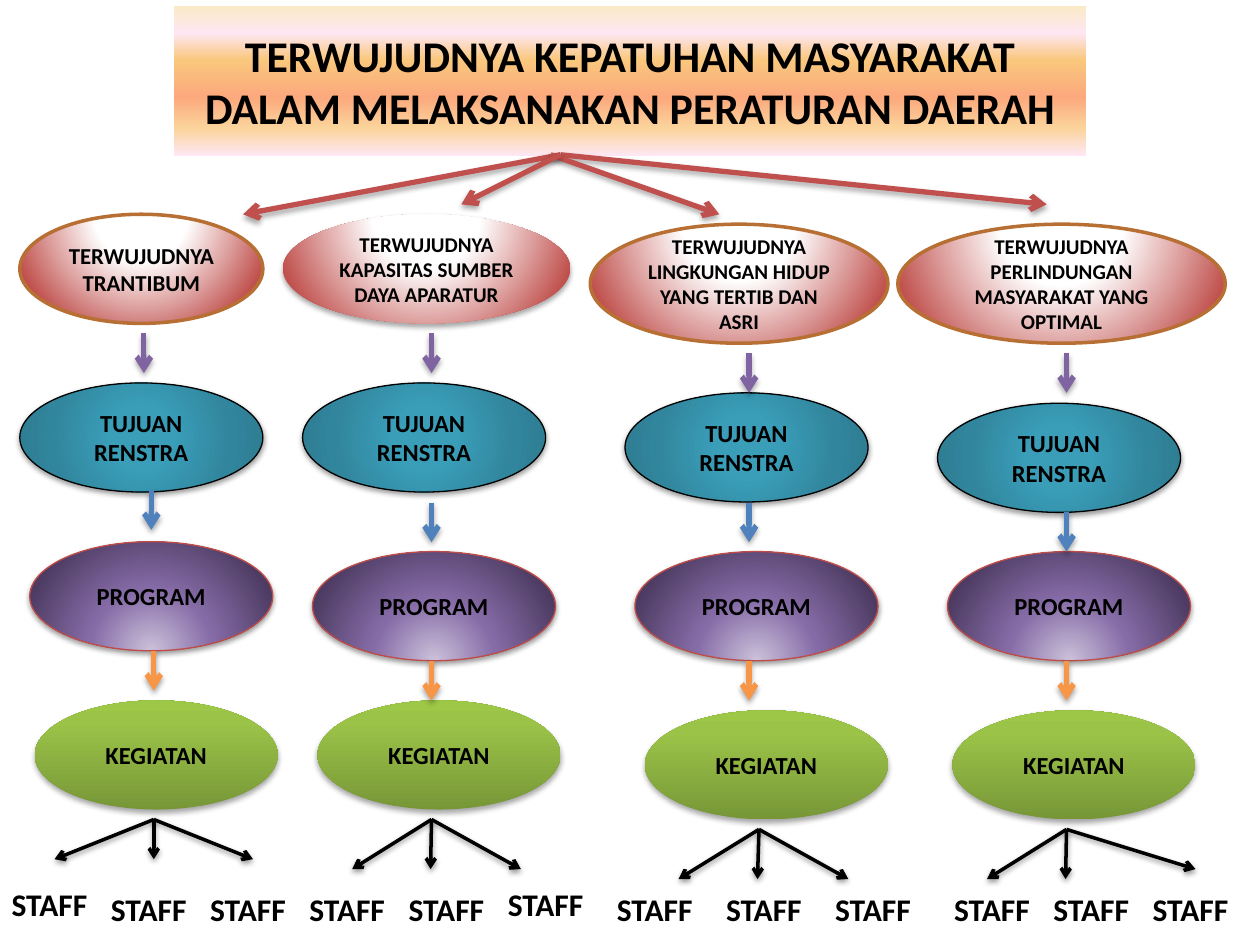
import lxml.etree
import pptx
import pptx.dml.color
import pptx.enum.shapes
import pptx.enum.text
import pptx.oxml.ns
import pptx.util

Cm = pptx.util.Cm
SOFT = (35, 1.8)
DARK = (38, 1.6)
WARM = [(0, "FBEAC7"), (18, "FEE7F2"), (36, "FAC77D"),
        (61, "FBA97D"), (82, "FBD49C"), (100, "FEE7F2")]
ROSE = [(0, "FFFFFF"), (35, "FFFFFF"), (100, "C0504D")]
TEAL = [(0, "3A9EB9"), (23, "3A9EB9"), (69, "31859C"), (97, "2E7C91")]
PLUM = [(0, "CCC1DA"), (46, "866CA7"), (100, "4D3B62")]
LEAF = [(0, "779737"), (80, "9BC348"), (100, "9DC746")]


def color(code):
    return pptx.dml.color.RGBColor.from_string(code)


def node(root, tag, **attrs):
    item = lxml.etree.SubElement(root, pptx.oxml.ns.qn("a:" + tag))
    for name, value in attrs.items():
        item.set(name, str(value))
    return item


class Chart:
    font = "Calibri"
    ink = "000000"

    def __init__(self, deck):
        self.slide = deck.slides.add_slide(deck.slide_layouts[5])
        self.shapes = self.slide.shapes

    def blend(self, shape, stops, angle=None, focus=None):
        grad = node(shape._element.spPr, "gradFill", rotWithShape=1)
        row = node(grad, "gsLst")
        for place, code in stops:
            node(node(row, "gs", pos=place * 1000), "srgbClr", val=code)
        if focus:
            ring = node(grad, "path", path="circle")
            sides = {side: part * 1000 for side, part in zip("ltrb", focus)}
            node(ring, "fillToRect", **sides)
        else:
            node(grad, "lin", ang=angle * 60000, scaled=0)

    def shade(self, item, look):
        glow = node(item._element.spPr, "effectLst")
        if look:
            alpha, dist = look
            drop = node(glow, "outerShdw", blurRad=pptx.util.Pt(3.15),
                        dist=pptx.util.Pt(dist), dir=5400000, rotWithShape=0)
            node(node(drop, "srgbClr", val=self.ink), "alpha", val=alpha * 1000)

    def words(self, shape, text, size):
        frame = shape.text_frame
        frame.text = text
        frame.word_wrap = True
        frame.auto_size = pptx.enum.text.MSO_AUTO_SIZE.NONE
        frame.vertical_anchor = pptx.enum.text.MSO_ANCHOR.MIDDLE
        for para in frame.paragraphs:
            para.alignment = pptx.enum.text.PP_ALIGN.CENTER
            para.font.name = self.font
            para.font.size = pptx.util.Pt(size)
            para.font.bold = True
            para.font.color.rgb = color(self.ink)

    def title(self, text, x, y, w, h):
        shape = self.shapes.title
        shape.left, shape.top, shape.width, shape.height = map(Cm, (x, y, w, h))
        self.blend(shape, WARM, angle=90)
        self.words(shape, text, 25)

    def oval(self, text, x, y, w, h, size, stops, angle=None, focus=None,
             edge=None, look=None):
        kind = pptx.enum.shapes.MSO_SHAPE.OVAL
        shape = self.shapes.add_shape(kind, Cm(x), Cm(y), Cm(w), Cm(h))
        self.blend(shape, stops, angle, focus)
        if edge:
            shape.line.color.rgb = color(edge[0])
            shape.line.width = pptx.util.Pt(edge[1])
        else:
            shape.line.fill.background()
        self.shade(shape, look)
        self.words(shape, text, size)

    def arrow(self, start, end, code, width=3, look=SOFT):
        kind = pptx.enum.shapes.MSO_CONNECTOR.STRAIGHT
        link = self.shapes.add_connector(kind, *map(Cm, (*start, *end)))
        link.line.color.rgb = color(code)
        link.line.width = pptx.util.Pt(width)
        edge = link._element.spPr.find(pptx.oxml.ns.qn("a:ln"))
        node(edge, "tailEnd", type="arrow")
        self.shade(link, look)

    def label(self, text, x, y, w, h):
        box = self.shapes.add_textbox(Cm(x), Cm(y), Cm(w), Cm(h))
        self.words(box, text, 18)


def main():
    deck = pptx.Presentation()
    deck.slide_width, deck.slide_height = Cm(25.4), Cm(19.05)
    chart = Chart(deck)
    chart.title("TERWUJUDNYA KEPATUHAN MASYARAKAT\n"
                "DALAM MELAKSANAKAN PERATURAN DAERAH", 3.5, 0.13, 18.4, 3)

    for start, end in [(11.3, (4.9, 4.32)), (11.3, (21.1, 4.12)),
                       (11.1, (14.5, 4.32)), (11.3, (9.3, 4.12))]:
        chart.arrow((start, 3.12), end, "C0504D")

    rim = ("B76F34", 2)
    goals = [
        ("TERWUJUDNYA TRANTIBUM", 0.4, 4.32, 4.9, 2.2, 13, rim, None),
        ("TERWUJUDNYA KAPASITAS SUMBER DAYA APARATUR",
         5.7, 4.32, 5.8, 2.2, 12, None, SOFT),
        ("TERWUJUDNYA LINGKUNGAN HIDUP YANG TERTIB DAN ASRI",
         11.9, 4.52, 6, 2.4, 12, rim, None),
        ("TERWUJUDNYA PERLINDUNGAN MASYARAKAT YANG OPTIMAL",
         18.1, 4.52, 6.6, 2.4, 12, rim, None),
    ]
    for *place, edge, look in goals:
        chart.oval(*place, ROSE, focus=(50, -80, 50, 180), edge=edge, look=look)

    steps = [
        ("TUJUAN RENSTRA", (0.4, 6.1, 12.6, 18.9), (7.72, 7.72, 7.92, 8.13),
         dict(stops=TEAL, focus=(50, 50, 50, 50), edge=("000000", 0.75), look=DARK)),
        ("PROGRAM", (0.6, 6.3, 12.8, 19.1), (10.92, 11.12, 11.12, 11.12),
         dict(stops=PLUM, focus=(50, 130, 50, -30), edge=("BF4C48", 0.75), look=DARK)),
        ("KEGIATAN", (0.7, 6.4, 13, 19.2), (14.12, 14.12, 14.32, 14.32),
         dict(stops=LEAF, angle=270, look=SOFT)),
    ]
    for text, lefts, tops, style in steps:
        for x, y in zip(lefts, tops):
            chart.oval(text, x, y, 4.9, 2.2, 14, **style)

    links = [
        ("8064A2", 2.9, (6.72, 6.72, 7.12, 7.12)),
        ("4F81BD", 3.05, (9.88, 10.13, 10.13, 10.32)),
        ("F79646", 3.1, (13.12, 13.32, 13.32, 13.32)),
    ]
    for code, first, tops in links:
        for x, y in zip((first, 8.7, 15.1, 21.5), tops):
            chart.arrow((x, y), (x, y + 0.8), code)

    fans = [
        ((3.1, 16.52), (1.1, 3.1, 5.1), (17.32, 17.32, 17.32)),
        ((8.7, 16.52), (7.1, 8.68, 10.5), (17.52, 17.52, 17.52)),
        ((15.3, 16.72), (13.68, 15.27, 17.1), (17.72, 17.72, 17.72)),
        ((21.5, 16.72), (19.9, 21.48, 24.1), (17.72, 17.72, 17.52)),
    ]
    for start, tips, ends in fans:
        for end in zip(tips, ends):
            chart.arrow(start, end, "000000", 2, DARK)

    raised = {0: (16.92, 2.6), 5: (17.12, 2.2)}
    rows = [(1, 2), (7, 2), (13.2, 2.2), (20, 2)]
    mids = [first + gap * i for first, gap in rows for i in range(3)]
    for i, mid in enumerate(mids):
        y, h = raised.get(i, (17.32, 2))
        chart.label("STAFF", mid - 2.1, y, 4.2, h)

    deck.save("out.pptx")


if __name__ == "__main__":
    main()
